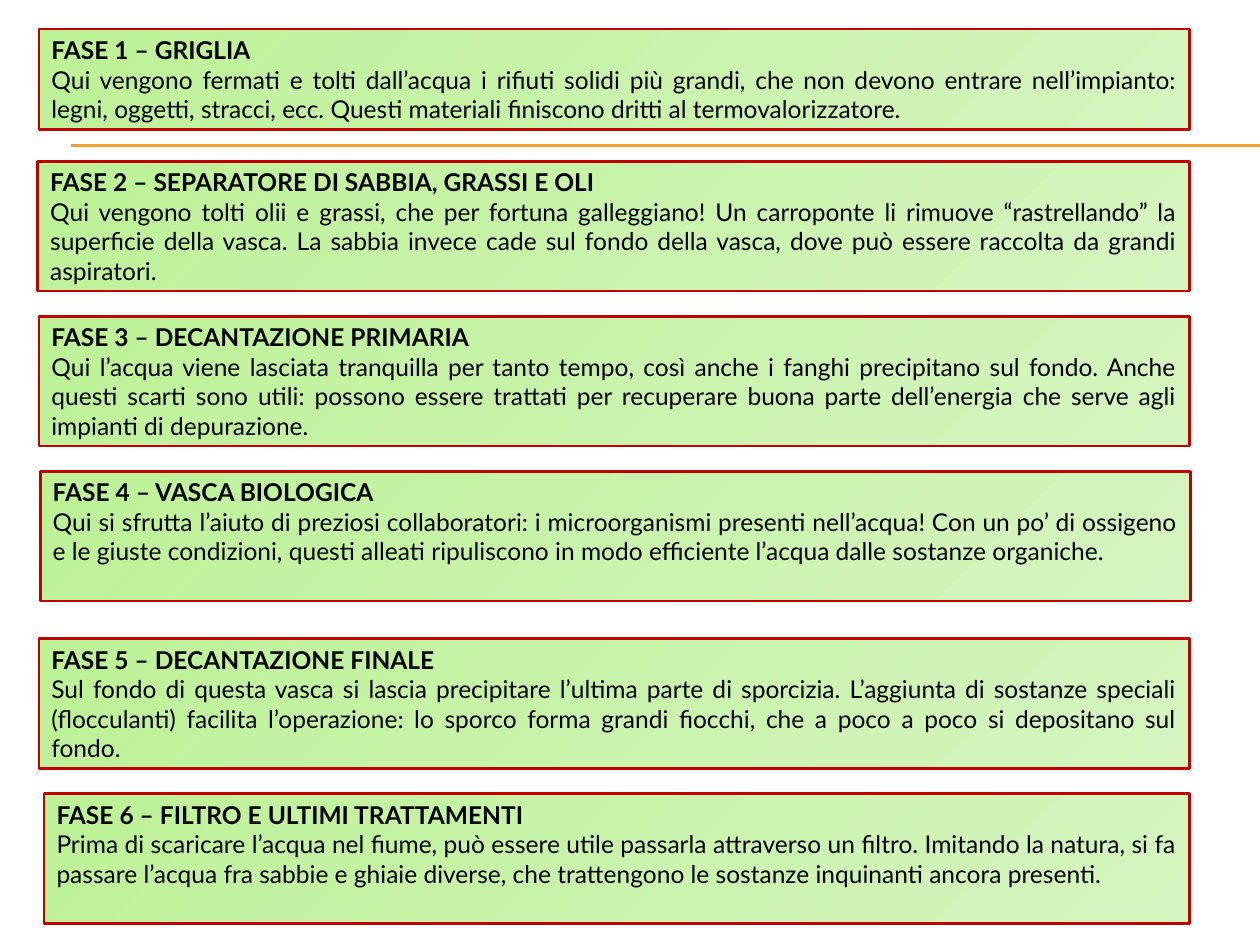
"""Build a slide describing the six phases of water treatment."""
import pptx
import pptx.dml.color
import pptx.enum.shapes
import pptx.enum.text
import pptx.util
from lxml import etree

Inches = pptx.util.Inches
Pt = pptx.util.Pt
RGBColor = pptx.dml.color.RGBColor

GREEN = RGBColor(0xBD, 0xF2, 0x97)
PALE_GREEN = RGBColor(0xD5, 0xF5, 0xC0)
RED = RGBColor(0xC0, 0x00, 0x00)
ORANGE = RGBColor(0xF0, 0xA2, 0x2E)
BLACK = RGBColor(0x00, 0x00, 0x00)
FONT = "Lato"
DRAWING = "http://schemas.openxmlformats.org/drawingml/2006/main"

RULE_HEIGHTS = (1.15, 1.16)
PHASES = [
    ((0.31, 0.23, 9.13, 0.8), "FASE 1 – GRIGLIA",
     "Qui vengono fermati e tolti dall’acqua i rifiuti solidi più grandi, che non devono "
     "entrare nell’impianto: legni, oggetti, stracci, ecc. Questi materiali finiscono "
     "dritti al termovalorizzatore."),
    ((0.3, 1.28, 9.14, 1.03), "FASE 2 – SEPARATORE DI SABBIA, GRASSI E OLI",
     "Qui vengono tolti olii e grassi, che per fortuna galleggiano! Un carroponte li "
     "rimuove “rastrellando” la superficie della vasca. La sabbia invece cade sul fondo "
     "della vasca, dove può essere raccolta da grandi aspiratori."),
    ((0.31, 2.51, 9.13, 1.03), "FASE 3 – DECANTAZIONE PRIMARIA",
     "Qui l’acqua viene lasciata tranquilla per tanto tempo, così anche i fanghi "
     "precipitano sul fondo. Anche questi scarti sono utili: possono essere trattati per "
     "recuperare buona parte dell’energia che serve agli impianti di depurazione."),
    ((0.32, 3.74, 9.13, 1.03), "FASE 4 – VASCA BIOLOGICA",
     "Qui si sfrutta l’aiuto di preziosi collaboratori: i microorganismi presenti "
     "nell’acqua! Con un po’ di ossigeno e le giuste condizioni, questi alleati "
     "ripuliscono in modo efficiente l’acqua dalle sostanze organiche."),
    ((0.31, 5.07, 9.13, 1.03), "FASE 5 – DECANTAZIONE FINALE",
     "Sul fondo di questa vasca si lascia precipitare l’ultima parte di sporcizia. "
     "L’aggiunta di sostanze speciali (flocculanti) facilita l’operazione: lo sporco "
     "forma grandi fiocchi, che a poco a poco si depositano sul fondo."),
    ((0.35, 6.3, 9.09, 1.03), "FASE 6 – FILTRO E ULTIMI TRATTAMENTI",
     "Prima di scaricare l’acqua nel fiume, può essere utile passarla attraverso un "
     "filtro. Imitando la natura, si fa passare l’acqua fra sabbie e ghiaie diverse, che "
     "trattengono le sostanze inquinanti ancora presenti."),
]


def add_rule(slide, height):
    rule = slide.shapes.add_connector(
        pptx.enum.shapes.MSO_CONNECTOR.STRAIGHT,
        Inches(0.56), Inches(height), Inches(10), Inches(height))
    rule.line.color.rgb = ORANGE
    rule.line.width = Pt(0.75)
    etree.SubElement(rule.line._get_or_add_ln().getparent(), f"{{{DRAWING}}}effectLst")


def add_text(paragraph, text, bold, alignment):
    paragraph.alignment = alignment
    run = paragraph.add_run()
    run.text = text
    run.font.name = FONT
    run.font.size = Pt(14)
    run.font.bold = bold
    run.font.color.rgb = BLACK


def add_phase(slide, place, heading, description):
    box = slide.shapes.add_shape(
        pptx.enum.shapes.MSO_SHAPE.RECTANGLE, *(Inches(length) for length in place))
    box.shadow.inherit = False
    box.fill.gradient()
    box.fill.gradient_angle = 315
    for stop, color, position in zip(box.fill.gradient_stops, (GREEN, PALE_GREEN), (0, 1)):
        stop.color.rgb = color
        stop.position = position
    box.line.color.rgb = RED
    box.line.width = Pt(1.5)
    frame = box.text_frame
    frame.word_wrap = True
    frame.auto_size = pptx.enum.text.MSO_AUTO_SIZE.SHAPE_TO_FIT_TEXT
    frame.vertical_anchor = pptx.enum.text.MSO_ANCHOR.TOP
    add_text(frame.paragraphs[0], heading, True, pptx.enum.text.PP_ALIGN.LEFT)
    add_text(frame.add_paragraph(), description, False, pptx.enum.text.PP_ALIGN.JUSTIFY)


def main():
    presentation = pptx.Presentation()
    presentation.slide_width = Inches(10)
    presentation.slide_height = Inches(7.5)
    slide = presentation.slides.add_slide(presentation.slide_layouts[6])
    for height in RULE_HEIGHTS:
        add_rule(slide, height)
    for phase in PHASES:
        add_phase(slide, *phase)
    presentation.save("out.pptx")


if __name__ == "__main__":
    main()
